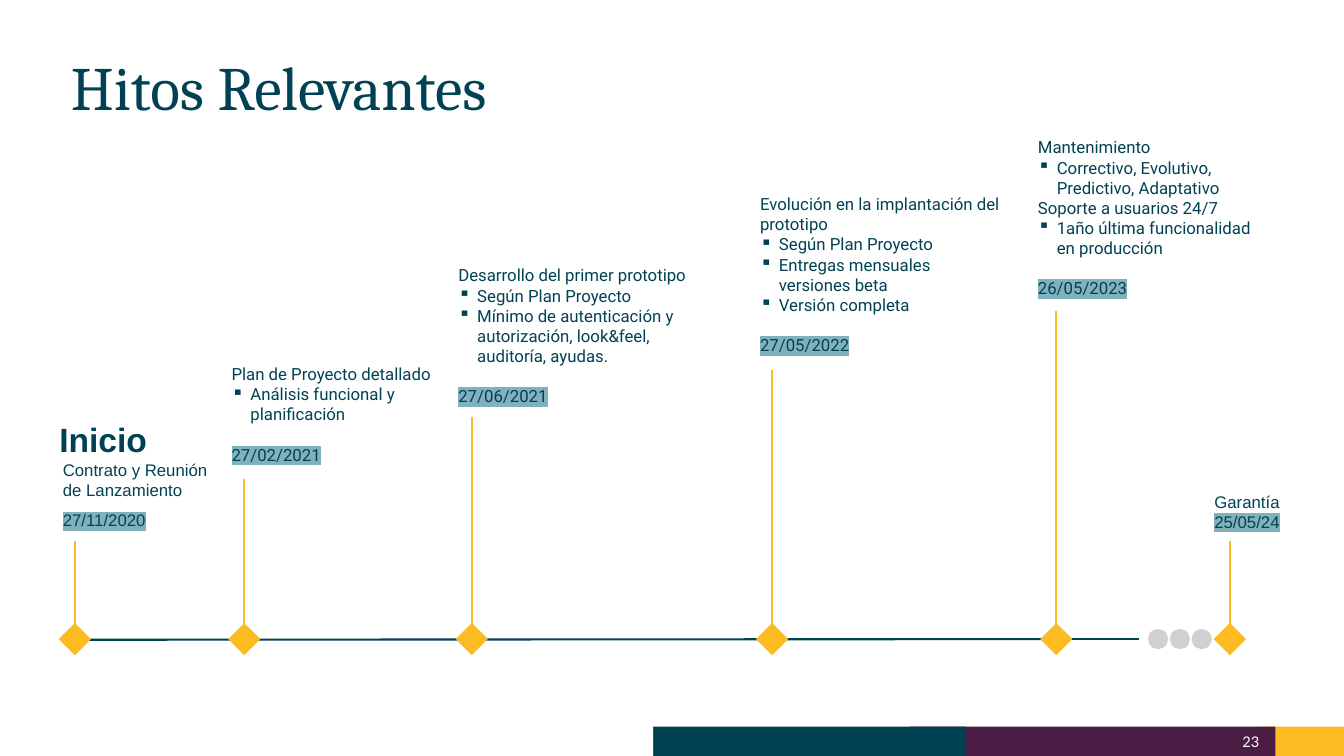
from lxml import etree
from pptx import Presentation
from pptx.dml.color import RGBColor
from pptx.enum import shapes, text
from pptx.oxml.ns import qn
from pptx.util import Pt

TEAL = RGBColor(0x00, 0x42, 0x54)
YELLOW = RGBColor(0xFB, 0xBB, 0x21)
PURPLE = RGBColor(0x4B, 0x1C, 0x44)
GREY = RGBColor(0xD0, 0xD0, 0xD0)
WHITE = RGBColor(0xFF, 0xFF, 0xFF)
DATE_MARK = "81B1BD"
BULLET = "▪"
AXIS_Y = 456.5
DIAMOND = 23
DOT = 14.4

prs = Presentation()
prs.slide_width, prs.slide_height = Pt(960), Pt(540)
slide = prs.slides.add_slide(prs.slide_layouts[5])


def write(holder, lines, font="Roboto", size=12, color=TEAL, bold=False, inset=(9.4, 9.4),
          align=text.PP_ALIGN.LEFT, anchor=text.MSO_ANCHOR.TOP, spacing=None,
          date=None, date_gap=0, date_spacing=None):
    """Fill a text holder; lines that start with BULLET are indented, the date is highlighted."""
    frame = holder.text_frame
    frame.word_wrap = True
    frame.auto_size = text.MSO_AUTO_SIZE.NONE
    frame.vertical_anchor = anchor
    frame.margin_left = frame.margin_right = Pt(inset[0])
    frame.margin_top = frame.margin_bottom = Pt(inset[1])
    for i, line in enumerate(lines + ([date] if date else [])):
        para = frame.paragraphs[0] if i == 0 else frame.add_paragraph()
        para.alignment = align
        is_date = date is not None and i == len(lines)
        line_spacing = date_spacing if is_date else spacing
        if line_spacing:
            para.line_spacing = line_spacing
        if is_date and date_gap:
            para.space_before = Pt(date_gap)
        if line.startswith(BULLET):
            props = para._p.get_or_add_pPr()
            props.set("marL", str(Pt(13.5)))
            props.set("indent", str(-Pt(13.5)))
            etree.SubElement(props, qn("a:buChar")).set("char", BULLET)
        run = para.add_run()
        run.text = line.removeprefix(BULLET)
        run.font.name, run.font.size, run.font.bold = font, Pt(size), bold
        run.font.color.rgb = color
        if is_date:
            mark = etree.Element(qn("a:highlight"))
            etree.SubElement(mark, qn("a:srgbClr")).set("val", DATE_MARK)
            run._r.rPr.find(qn("a:solidFill")).addnext(mark)


def draw(kind, x, y, w, h, color):
    """Add a plain filled shape, or a line from (x, y) to (w, h) when kind is None."""
    if kind is None:
        line = slide.shapes.add_connector(shapes.MSO_CONNECTOR.STRAIGHT, Pt(x), Pt(y), Pt(w), Pt(h))
        line.line.color.rgb, line.line.width = color, Pt(1.5)
        etree.SubElement(line._element.spPr, qn("a:effectLst"))
        return
    shape = slide.shapes.add_shape(kind, Pt(x), Pt(y), Pt(w), Pt(h))
    shape.shadow.inherit = False
    shape.fill.solid()
    shape.fill.fore_color.rgb = color
    shape.line.fill.background()


# Footer band and page number
RECT = shapes.MSO_SHAPE.RECTANGLE
for left, width, color in [(899, 61, YELLOW), (650, 261, PURPLE), (456, 234, TEAL)]:
    draw(RECT, left, 519, width, 21, color)
draw(RECT, 0, 516, 466.5, 24, WHITE)
page_number = slide.shapes.add_textbox(Pt(798), Pt(524), Pt(101.5), Pt(11))
write(page_number, ["23"], font="Lato", size=10.5, color=WHITE, inset=(0, 0),
      align=text.PP_ALIGN.RIGHT, anchor=text.MSO_ANCHOR.MIDDLE)

# Title
title = slide.shapes.title
title.left, title.top, title.width, title.height = Pt(43.5), Pt(37.5), Pt(436), Pt(51)
write(title, ["Hitos Relevantes"], font="Cambria", size=44, inset=(7.2, 3.6), spacing=0.9)

# Time axis
draw(None, 754.5, AXIS_Y, 813.5, AXIS_Y, TEAL)
draw(None, 53, AXIS_Y + 0.5, 754.5, AXIS_Y, TEAL)

# Milestones: centre of marker, top of stem, text box, lines, format
start = slide.shapes.add_textbox(Pt(33), Pt(289.5), Pt(138), Pt(37))
write(start, ["Inicio"], font="Arial", size=24, bold=True)

milestones = [
    (53.5, 386.5, (35.5, 319, 124.5, 71), ["Contrato y Reunión de Lanzamiento"],
     dict(date="27/11/2020", font="Arial", date_spacing=1.5)),
    (174.5, 342, (156, 250.5, 165.5, 95),
     ["Plan de Proyecto detallado", "▪Análisis funcional y planificación"],
     dict(date="27/02/2021", date_gap=14.4)),
    (337, 298, (318, 180, 191, 126),
     ["Desarrollo del primer prototipo", "▪Según Plan Proyecto",
      "▪Mínimo de autenticación y autorización, look&feel, auditoría, ayudas."],
     dict(date="27/06/2021", date_gap=14.4)),
    (551.5, 264.5, (533.5, 129, 191, 137),
     ["Evolución en la implantación del prototipo", "▪Según Plan Proyecto",
      "▪Entregas mensuales versiones beta", "▪Versión completa"],
     dict(date="27/05/2022", date_gap=14.4)),
    (754.5, 222, (732, 88.5, 177, 137),
     ["Mantenimiento", "▪Correctivo, Evolutivo, Predictivo, Adaptativo",
      "Soporte a usuarios 24/7", "▪1año última funcionalidad en producción"],
     dict(date="26/05/2023", date_gap=14.4)),
    (878.5, 386.5, (858, 341.5, 76.5, 48), ["Garantía"],
     dict(date="25/05/24", font="Arial")),
]
for center, stem_top, box, lines, style in milestones:
    draw(shapes.MSO_SHAPE.DIAMOND, center - DIAMOND / 2, AXIS_Y - DIAMOND / 2,
         DIAMOND, DIAMOND, YELLOW)
    draw(None, center, AXIS_Y, center, stem_top, YELLOW)
    write(slide.shapes.add_textbox(*map(Pt, box)), lines, **style)

# Dots for the time until the guarantee
for i in range(3):
    draw(shapes.MSO_SHAPE.OVAL, 820 + 15.6 * i, AXIS_Y - DOT / 2, DOT, DOT, GREY)

prs.save("out.pptx")
